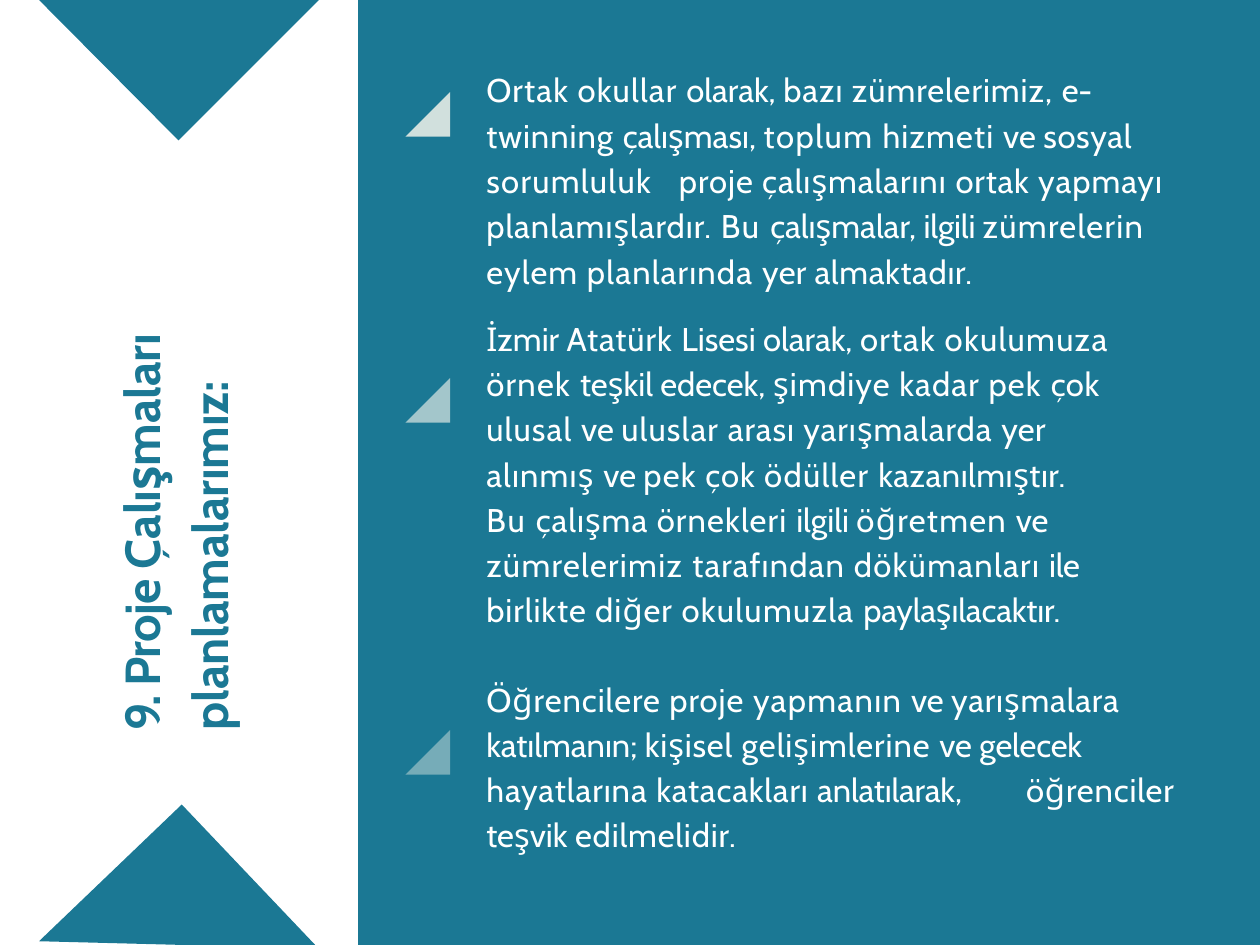
import pptx
import pptx.dml.color
import pptx.enum.shapes
import pptx.enum.text
import pptx.oxml
import pptx.oxml.ns
import pptx.util
from pptx.util import Cm

TEAL = pptx.dml.color.RGBColor(0x1B, 0x78, 0x94)
WHITE = pptx.dml.color.RGBColor(0xFF, 0xFF, 0xFF)
CREAM = pptx.dml.color.RGBColor(0xFF, 0xFA, 0xF0)
FONT = "Cabin"
PAGE_WIDTH, PAGE_HEIGHT, SIDE_WIDTH = 27.1, 20.32, 7.7

# Each span is a piece of text and its letter spacing in points
TITLE = [
    [("9. ", -1.6), ("Proje ", -0.5), ("Çalışmaları", -0.1)],
    [("planlamalarımız:", -0.1)],
]
JOINT_WORK = [
    ("Ortak okullar ", 0.7), ("olarak, ", 0), ("bazı zümrelerimiz, ", 0.6),
    ("e- ", -0.2), ("twinning ", 0.6), ("çalışması, ", 0), ("toplum ", 0.9),
    ("hizmeti ", 0.7), ("ve ", 0), ("sosyal ", 0.4), ("sorumluluk\t", 0.8),
    ("proje çalışmalarını ", 0.6), ("ortak ", 0.5),
    ("yapmayı planlamışlardır. ", 0.6), ("Bu ", 1.1), ("çalışmalar, ", 0),
    ("ilgili ", -0.1), ("zümrelerin ", 0.8), ("eylem planlarında ", 0.7),
    ("yer ", 0.2), ("almaktadır.", 0.4),
]
AWARDS = [
    ("İzmir ", 0), ("Atatürk ", 0.6), ("Lisesi olarak, ", 0), ("ortak ", 0.7),
    ("okulumuza örnek ", 0.8), ("teşkil edecek, ", 0),
    ("şimdiye kadar pek ", 0.7), ("çok ", 0.3), ("ulusal ", 0.7), ("ve ", 0),
    ("uluslar ", 0.7), ("arası yarışmalarda ", 0.6), ("yer ", 0.2),
    ("alınmış ", 0.7), ("ve ", 0), ("pek ", 0.7), ("çok ", 0.6),
    ("ödüller ", 0.8), ("kazanılmıştır.", 0.3),
]
SHARING = [
    ("Bu ", 1.1), ("çalışma ", 0.6), ("örnekleri ", 0.7), ("ilgili ", 0),
    ("öğretmen ", 0.8), ("ve ", -0.2), ("zümrelerimiz ", 0.8),
    ("tarafından ", 0.7), ("dökümanları ", 0.8), ("ile ", -0.2),
    ("birlikte diğer ", 0.6), ("okulumuzla ", 0.8), ("paylaşılacaktır.", -0.1),
]
STUDENTS = [
    ("Öğrencilere proje ", 0.6), ("yapmanın ", 0.8), ("ve ", 0),
    ("yarışmalara ", 0.5), ("katılmanın; ", 0), ("kişisel ", 0.5),
    ("gelişimlerine ", 0.6), ("ve ", 0), ("gelecek ", -0.1),
    ("hayatlarına ", 0.6), ("katacakları ", 0.5), ("anlatılarak,\t", -0.1),
    ("öğrenciler ", 0.5), ("teşvik ", 0), ("edilmelidir.", 0.5),
]
# Spans, space before in points, right indent in cm, tab stop in cm
BODY = [(JOINT_WORK, 1, 0, 4.14), (AWARDS, 13.3, 1, None),
        (SHARING, 0, 0, None), (STUDENTS, 26.7, 0, 11.61)]
# Top in cm and opacity in percent
MARKERS = [(1.98, 80), (8.13, 60), (15.7, 40)]


def paint(shape, color, opacity=100):
    shape.shadow.inherit = False
    shape.line.fill.background()
    shape.fill.solid()
    shape.fill.fore_color.rgb = color
    if opacity < 100:
        tint = shape._element.spPr.find(".//" + pptx.oxml.ns.qn("a:srgbClr"))
        alpha = pptx.oxml.parse_xml(
            f'<a:alpha {pptx.oxml.ns.nsdecls("a")} val="{opacity * 1000}"/>')
        tint.append(alpha)


def add_panel(page, box, color):
    kind = pptx.enum.shapes.MSO_SHAPE.RECTANGLE
    paint(page.shapes.add_shape(kind, *map(Cm, box)), color)


def add_polygon(page, left, top, points, color, opacity=100):
    corners = [(Cm(left + x), Cm(top + y)) for x, y in points]
    builder = page.shapes.build_freeform(*corners[0])
    builder.add_line_segments(corners[1:], close=True)
    paint(builder.convert_to_shape(), color, opacity)


def prepare_frame(frame):
    frame.word_wrap = True
    frame.auto_size = pptx.enum.text.MSO_AUTO_SIZE.NONE
    frame.vertical_anchor = pptx.enum.text.MSO_ANCHOR.TOP
    frame.margin_right = frame.margin_bottom = 0
    frame.margin_left = frame.margin_top = Cm(0.03)


def write_spans(para, spans, size, color, bold=False):
    para.alignment = pptx.enum.text.PP_ALIGN.LEFT
    for text, spacing in spans:
        span = para.add_run()
        span.text = text
        span.font.name = FONT
        span.font.size = pptx.util.Pt(size)
        span.font.bold = bold
        span.font.color.rgb = color
        span._r.get_or_add_rPr().set("spc", str(round(spacing * 100)))


def add_tab_stop(para, position):
    para._p.get_or_add_pPr().append(pptx.oxml.parse_xml(
        f'<a:tabLst {pptx.oxml.ns.nsdecls("a")}>'
        f'<a:tab pos="{Cm(position)}" algn="l"/></a:tabLst>'))


def build_sidebar(page, left, top, width, height):
    add_panel(page, (left, top, width, height), WHITE)

    # Arrow-like triangles at the top and bottom edges
    add_polygon(page, left, top, [(6.86, 0), (3.84, 3.02), (0.84, 0)], TEAL)
    add_polygon(page, left, top + height,
                [(0.84, -0.08), (3.91, -3.02), (6.78, 0), (3.94, 0)], TEAL)

    # Title in front of the panel, turned about its centre to read upwards
    title = page.shapes.title
    page.shapes._spTree.append(title._element)
    length, depth = 10.19, 2.97
    title.left = Cm(left + 3.85 - length / 2)
    title.top = Cm(top + 10.64 - depth / 2)
    title.width, title.height = Cm(length), Cm(depth)
    title.rotation = 270
    frame = title.text_frame
    prepare_frame(frame)
    for index, (spans, before) in enumerate(zip(TITLE, (3, 5.2))):
        para = frame.add_paragraph() if index else frame.paragraphs[0]
        para.space_before = pptx.util.Pt(before)
        write_spans(para, spans, 30, TEAL, bold=True)


def build_content(page, left, top, width, height):
    add_panel(page, (left, top, width, height), TEAL)

    # Fading corner markers
    for marker_top, opacity in MARKERS:
        add_polygon(page, left + 1.02, top + marker_top,
                    [(0.96, 0), (0.96, 0.96), (0, 0.96)], CREAM, opacity)

    # Running text
    box = page.shapes.add_textbox(Cm(left + 2.73), Cm(top + 1.35),
                                  Cm(14.96), Cm(18.14))
    frame = box.text_frame
    prepare_frame(frame)
    for index, (spans, before, right_indent, tab) in enumerate(BODY):
        para = frame.add_paragraph() if index else frame.paragraphs[0]
        para.line_spacing = 1.15
        para.space_before = pptx.util.Pt(before)
        para._p.get_or_add_pPr().set("marR", str(Cm(right_indent)))
        if tab:
            add_tab_stop(para, tab)
        write_spans(para, spans, 20, WHITE)


def main():
    deck = pptx.Presentation()
    deck.slide_width, deck.slide_height = Cm(PAGE_WIDTH), Cm(PAGE_HEIGHT)
    page = deck.slides.add_slide(deck.slide_layouts[5])
    build_content(page, SIDE_WIDTH, 0, PAGE_WIDTH - SIDE_WIDTH, PAGE_HEIGHT)
    build_sidebar(page, 0, 0, SIDE_WIDTH, PAGE_HEIGHT)
    deck.save("out.pptx")


if __name__ == "__main__":
    main()
